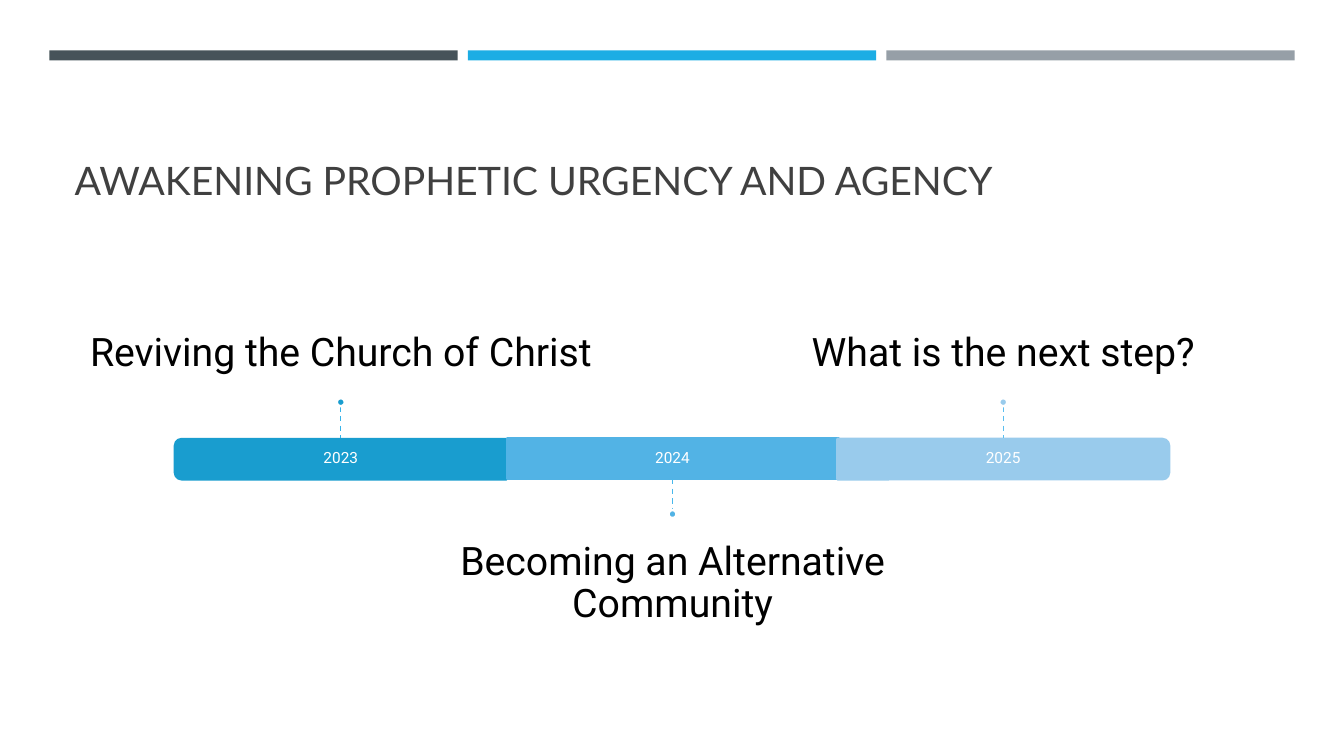
from lxml import etree
from pptx import Presentation
from pptx import util as u
from pptx.dml.color import RGBColor
from pptx.enum import dml, shapes, text
from pptx.oxml.ns import qn

SLATE = RGBColor(0x46, 0x53, 0x59)
SKY = RGBColor(0x1C, 0xAD, 0xE4)
GREY = RGBColor(0x96, 0x9F, 0xA7)
INK = RGBColor(0x40, 0x40, 0x40)
BLACK = RGBColor(0, 0, 0)
WHITE = RGBColor(0xFF, 0xFF, 0xFF)
DEEP_BLUE = RGBColor(0x19, 0x9D, 0xCF)
MID_BLUE = RGBColor(0x52, 0xB3, 0xE5)
PALE_BLUE = RGBColor(0x99, 0xCB, 0xEC)
DEEP_DASH = RGBColor(0x36, 0xB3, 0xE9)
MID_DASH = RGBColor(0x48, 0xB8, 0xEC)
PALE_DASH = RGBColor(0x5A, 0xBE, 0xEF)

SHAPE = shapes.MSO_SHAPE
ANCHOR = text.MSO_ANCHOR
ALIGN = text.PP_ALIGN


class TimelineSlide:
    SCALE = 9144
    HEADING = {"name": "Lato", "size": u.Pt(28), "bold": False}
    CAPTION = {"name": "Roboto", "size": u.Pt(28)}
    YEAR = {"name": "Roboto", "size": u.Pt(11)}

    def __init__(self, deck):
        deck.slide_width, deck.slide_height = self.px(1333, 750)
        self.slide = deck.slides.add_slide(deck.slide_layouts[5])

    def px(self, *lengths):
        return [u.Emu(length * self.SCALE) for length in lengths]

    def set_words(self, frame, words, font, color, anchor, align, margins):
        left, top, right, bottom = self.px(*margins)
        layout = {
            "text": words, "word_wrap": True, "vertical_anchor": anchor,
            "auto_size": text.MSO_AUTO_SIZE.NONE,
            "margin_left": left, "margin_top": top,
            "margin_right": right, "margin_bottom": bottom,
        }
        for key, value in layout.items():
            setattr(frame, key, value)
        line = frame.paragraphs[0]
        line.alignment, line.line_spacing = align, 0.9
        run = line.runs[0]
        for key, value in font.items():
            setattr(run.font, key, value)
        run.font.color.rgb = color

    def title(self, words, box):
        heading = self.slide.shapes.title
        for key, value in zip(("left", "top", "width", "height"), self.px(*box)):
            setattr(heading, key, value)
        self.set_words(heading.text_frame, words, self.HEADING, INK,
                       ANCHOR.BOTTOM, ALIGN.LEFT, (10, 5, 10, 5))

    def label(self, words, box, font, color, anchor, margins):
        frame = self.slide.shapes.add_textbox(*self.px(*box)).text_frame
        self.set_words(frame, words, font, color, anchor, ALIGN.CENTER, margins)

    def block(self, kind, box, fill, outline=None, rotation=0):
        block = self.slide.shapes.add_shape(kind, *self.px(*box))
        block.shadow.inherit = False
        block.rotation = rotation
        block.fill.solid()
        block.fill.fore_color.rgb = fill
        if outline is None:
            block.line.fill.background()
        else:
            block.line.color.rgb = outline
            block.line.width = u.Pt(1.75)

    def stem(self, x, top, bottom, color):
        stem = self.slide.shapes.add_connector(
            shapes.MSO_CONNECTOR.STRAIGHT, *self.px(x, top, x, bottom))
        stem.line.color.rgb = color
        stem.line.width = u.Pt(1)
        stem.line.dash_style = dml.MSO_LINE.DASH
        etree.SubElement(stem._element.spPr, qn("a:effectLst"))

    def segment(self, kind, center, rotation, color):
        width, height = (40, 329) if rotation else (329, 40)
        box = (center - width // 2, 455 - height // 2, width, height)
        self.block(kind, box, color, color, rotation)

    def milestone(self, center, year, caption, above, kind, rotation, color, dash):
        self.segment(kind, center, rotation, color)
        self.label(year, (center - 164, 435, 328, 40), self.YEAR, WHITE,
                   ANCHOR.MIDDLE, (9, 9, 9, 9))
        if above:
            caption_top, anchor, margins = 256, ANCHOR.BOTTOM, (0, 0, 0, 23)
            stem_top, dot_top = 403, 395
        else:
            caption_top, anchor, margins = 514, ANCHOR.TOP, (0, 23, 0, 0)
            stem_top, dot_top = 475, 506
        self.label(caption, (center - 274, caption_top, 548, 139), self.CAPTION,
                   BLACK, anchor, margins)
        self.stem(center, stem_top, stem_top + 32, dash)
        self.block(SHAPE.OVAL, (center - 4, dot_top, 8, 8), color, WHITE)


def main():
    deck = Presentation()
    timeline = TimelineSlide(deck)
    for i, color in enumerate((SLATE, SKY, GREY)):
        timeline.block(SHAPE.RECTANGLE, (49 + 415 * i, 50, 405, 10), color)
    timeline.title("AWAKENING PROPHETIC URGENCY AND AGENCY", (64, 77, 1206, 130))

    rounded = SHAPE.ROUND_2_SAME_RECTANGLE
    milestones = (
        ("2023", "Reviving the Church of Christ", True,
         rounded, 270, DEEP_BLUE, DEEP_DASH),
        ("2024", "Becoming an Alternative Community", False,
         SHAPE.RECTANGLE, 0, MID_BLUE, MID_DASH),
        ("2025", "What is the next step?", True,
         rounded, 90, PALE_BLUE, PALE_DASH),
    )
    for i, milestone in enumerate(milestones):
        timeline.milestone((677 + 657 * i) // 2, *milestone)
    deck.save("out.pptx")


if __name__ == "__main__":
    main()
